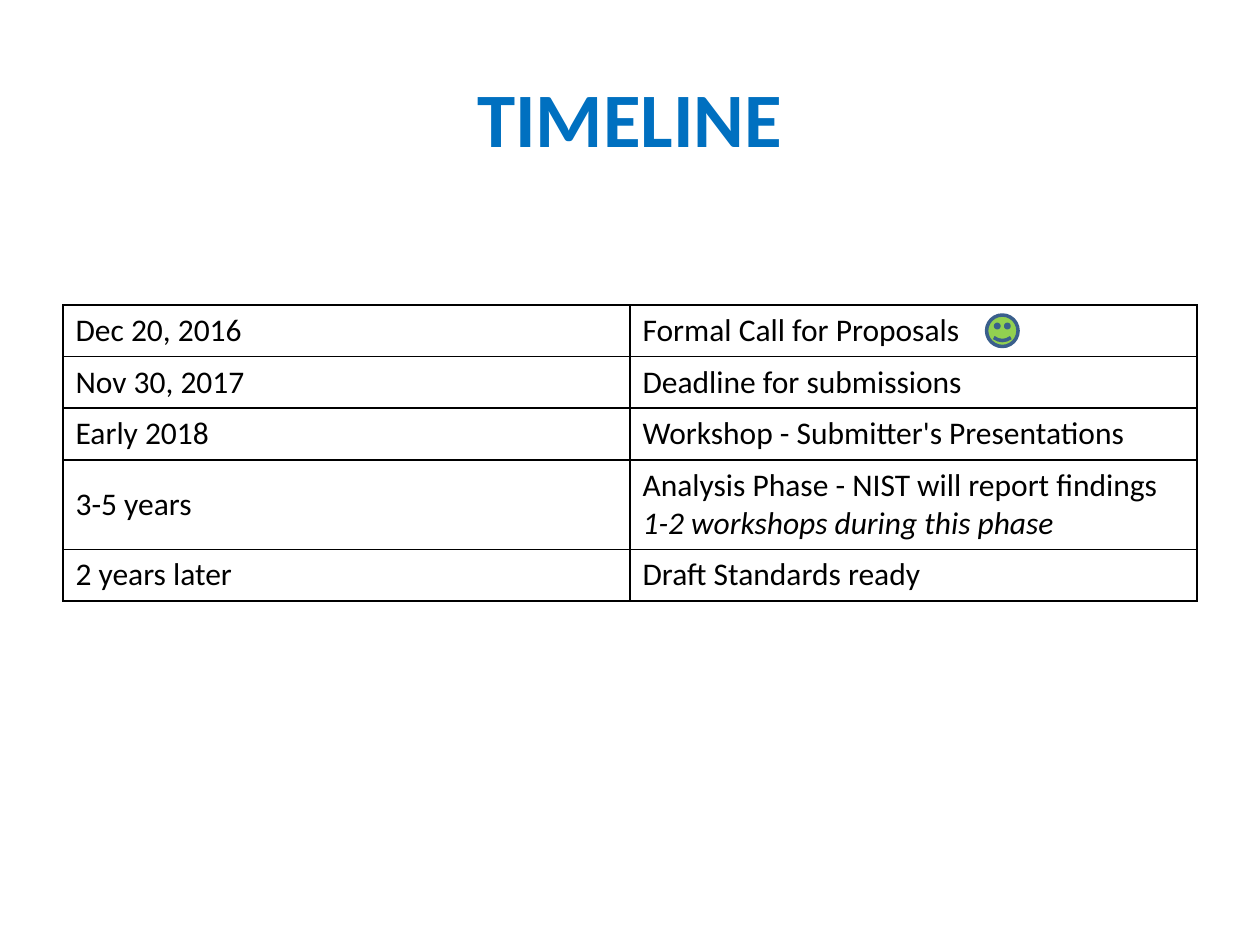
from typing import NamedTuple

from lxml import etree
from pptx import Presentation
from pptx import util as u
from pptx.dml.color import RGBColor
from pptx.enum import shapes, text
from pptx.oxml.ns import qn

HUES = {"title": "0070C0", "ink": "000000", "face": "92D050", "edge": "3A5F8C"}
FONT = "Calibri"
ROW = 0.41  # height of a one-line row
TALL = 0.71  # height of a two-line row


class Step(NamedTuple):
    date: str
    event: str
    note: str = ""


STEPS = [
    Step("Dec 20, 2016", "Formal Call for Proposals"),
    Step("Nov 30, 2017", "Deadline for submissions"),
    Step("Early 2018", "Workshop - Submitter's Presentations"),
    Step("3-5 years", "Analysis Phase - NIST will report findings",
         "1-2 workshops during this phase"),
    Step("2 years later", "Draft Standards ready"),
]


def hue(name: str) -> RGBColor:
    return RGBColor.from_string(HUES[name])


def style(par, size: int, name: str, bold: bool = False) -> None:
    font = par.font
    font.name, font.size, font.bold = FONT, u.Pt(size), bold
    font.color.rgb = hue(name)


def frame(cell) -> None:
    """Draw a thin border on all four sides of a table cell."""
    props = cell._tc.get_or_add_tcPr()
    for spot, side in enumerate(("a:lnL", "a:lnR", "a:lnT", "a:lnB")):
        line = etree.Element(qn(side), w=str(u.Pt(1)))
        fill = etree.SubElement(line, qn("a:solidFill"))
        etree.SubElement(fill, qn("a:srgbClr"), val=HUES["ink"])
        props.insert(spot, line)


def write(cell, words: str, note: str = "") -> None:
    """Fill a cell, with an optional note in italics on a second line."""
    cell.fill.background()
    cell.vertical_anchor = text.MSO_ANCHOR.MIDDLE
    par = cell.text_frame.paragraphs[0]
    style(par, 18, "ink")
    par.add_run().text = words
    if note:
        par.add_line_break()
        run = par.add_run()
        run.text = note
        run.font.italic = True
    frame(cell)


def add_title(slide, words: str) -> None:
    box = slide.shapes.add_textbox(
        u.Inches(0.5), u.Inches(0.3), u.Inches(9), u.Inches(1.25))
    body = box.text_frame
    body.word_wrap = True
    body.vertical_anchor = text.MSO_ANCHOR.MIDDLE
    par = body.paragraphs[0]
    par.text = words
    par.alignment = text.PP_ALIGN.CENTER
    style(par, 44, "title", bold=True)


def add_steps(slide, steps: list[Step]) -> None:
    highs = [TALL if step.note else ROW for step in steps]
    table = slide.shapes.add_table(
        len(steps), 2, u.Inches(0.5), u.Inches(2.42),
        u.Inches(9), u.Inches(sum(highs))).table
    table.first_row = table.horz_banding = False
    for row, step, high in zip(table.rows, steps, highs):
        row.height = u.Inches(high)
        write(row.cells[0], step.date)
        write(row.cells[1], step.event, step.note)


def add_smile(slide) -> None:
    smile = slide.shapes.add_shape(
        shapes.MSO_SHAPE.SMILEY_FACE, u.Inches(7.83), u.Inches(2.5),
        u.Inches(0.25), u.Inches(0.25))
    smile.shadow.inherit = False
    smile.fill.solid()
    smile.fill.fore_color.rgb = hue("face")
    smile.line.color.rgb = hue("edge")
    smile.line.width = u.Pt(2)


def main() -> None:
    deck = Presentation()
    deck.slide_width, deck.slide_height = u.Inches(10), u.Inches(7.5)
    slide = deck.slides.add_slide(deck.slide_layouts[6])
    add_title(slide, "TIMELINE")
    add_steps(slide, STEPS)
    add_smile(slide)
    deck.save("out.pptx")


if __name__ == "__main__":
    main()
